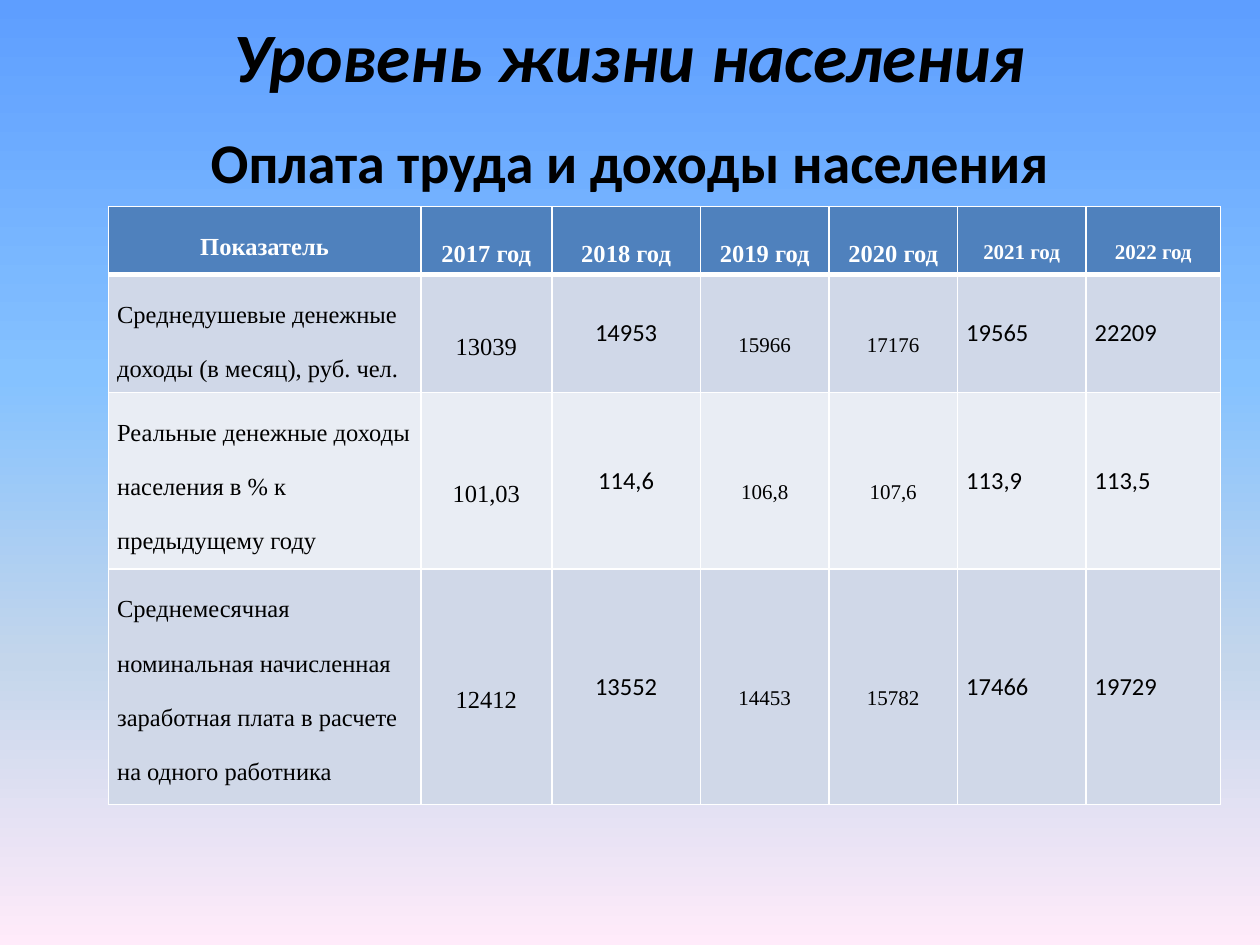
"""Build the slide on pay and income of the population."""
import dataclasses

import lxml.etree
import pptx
import pptx.dml.color
import pptx.enum.text
import pptx.oxml.ns
import pptx.util

Inches = pptx.util.Inches
Pt = pptx.util.Pt
qn = pptx.oxml.ns.qn
ALIGN = pptx.enum.text.PP_ALIGN
ANCHOR = pptx.enum.text.MSO_ANCHOR


@dataclasses.dataclass(frozen=True)
class Theme:
    """Hold the colours, fonts and type sizes."""
    ink: str = "000000"
    white: str = "FFFFFF"
    head: str = "4F81BD"
    bands: tuple = ("D0D8E8", "E9EDF4")
    sky: tuple = ((0, "5E9EFF"), (40, "85C2FF"), (70, "C4D6EB"), (100, "FFEBFA"))
    sans: str = "Calibri"
    serif: str = "Times New Roman"
    title: float = 39.6
    tail: float = 36
    sub: float = 32
    text: float = 14
    small: float = 12


def assign(item, values):
    """Set each named attribute of an item."""
    for name, value in values.items():
        setattr(item, name, value)


class Maker:
    """Draw styled elements on the current slide."""

    def __init__(self, theme, slide):
        """Keep the theme and the slide."""
        self.theme = theme
        self.slide = slide

    def backdrop(self):
        """Fill the background with the sky gradient."""
        fill = self.slide.background.fill
        fill.gradient()
        fill.gradient_angle = 270
        stops = next(self.slide.element.iter(qn("a:gsLst")))
        stops.clear()
        for place, color in self.theme.sky:
            stop = lxml.etree.SubElement(stops, qn("a:gs"), pos=str(place * 1000))
            lxml.etree.SubElement(stop, qn("a:srgbClr"), val=color)

    def phrase(self, par, text, color, font, layout):
        """Put one formatted run in a paragraph."""
        assign(par, layout)
        run = par.add_run()
        run.text = text
        assign(run.font, font)
        run.font.color.rgb = pptx.dml.color.RGBColor.from_string(color)

    def label(self, text, place, font, frame, tail=None):
        """Add a centred text box, with a closing line break if tail is given."""
        box = self.slide.shapes.add_textbox(*map(Inches, place)).text_frame
        assign(box, {"word_wrap": True, **frame})
        par = box.paragraphs[0]
        self.phrase(par, text, self.theme.ink, font, {"alignment": ALIGN.CENTER})
        if tail:
            par.add_line_break()
            lxml.etree.SubElement(par._p, qn("a:endParaRPr"), sz=str(tail * 100))

    def border(self, cell, widths):
        """Draw white lines on the four sides of a cell."""
        props = cell._tc.get_or_add_tcPr()
        for side, width in zip("LRTB", widths):
            line = lxml.etree.SubElement(props, qn(f"a:ln{side}"), w=str(Pt(width)))
            fill = lxml.etree.SubElement(line, qn("a:solidFill"))
            lxml.etree.SubElement(fill, qn("a:srgbClr"), val=self.theme.white)

    def cell(self, cell, text, fill, color, font, layout, anchor, widths):
        """Fill and format one table cell."""
        self.border(cell, widths)
        cell.fill.solid()
        cell.fill.fore_color.rgb = pptx.dml.color.RGBColor.from_string(fill)
        assign(cell, {
            "margin_left": Inches(0.07), "margin_right": Inches(0.07),
            "margin_top": 0, "margin_bottom": 0, "vertical_anchor": anchor,
        })
        self.phrase(cell.text_frame.paragraphs[0], text, color, font, layout)

    def table(self, rows, place, wide, tall):
        """Add the table of values by year."""
        theme = self.theme
        center = {"alignment": ALIGN.CENTER, "line_spacing": 2}
        left = {"alignment": ALIGN.LEFT}
        serif = {"name": theme.serif, "size": Pt(theme.text)}
        small = {"name": theme.serif, "size": Pt(theme.small)}
        sans = {"name": theme.sans, "size": Pt(theme.text)}
        styles = [
            (serif, {**left, "line_spacing": 2}), (serif, center),
            (sans, {"alignment": ALIGN.CENTER}),
            (small, center), (small, center), (sans, left), (sans, left),
        ]
        size = map(Inches, (*place, sum(wide), sum(tall)))
        grid = self.slide.shapes.add_table(len(rows), len(wide), *size).table
        for col, width in zip(grid.columns, wide):
            col.width = Inches(width)
        for row, height in zip(grid.rows, tall):
            row.height = Inches(height)
        for r, row in enumerate(rows):
            for c, text in enumerate(row):
                font, layout = styles[c]
                fill, color = theme.bands[(r - 1) % 2], theme.ink
                if r == 0:
                    font, layout = (small if c > 4 else serif), center
                    fill, color = theme.head, theme.white
                self.cell(
                    grid.cell(r, c), text, fill, color,
                    {**font, "bold": r == 0}, layout,
                    ANCHOR.MIDDLE if c else ANCHOR.TOP,
                    (1, 1, 3 if r == 1 else 1, 3 if r == 0 else 1),
                )


ROWS = [
    ["Показатель", *(f"{year} год" for year in range(2017, 2023))],
    ["Среднедушевые денежные доходы (в месяц), руб. чел.",
     "13039", "14953", "15966", "17176", "19565", "22209"],
    ["Реальные денежные доходы населения в % к предыдущему году",
     "101,03", "114,6", "106,8", "107,6", "113,9", "113,5"],
    ["Среднемесячная номинальная начисленная заработная плата "
     "в расчете на одного работника",
     "12412", "13552", "14453", "15782", "17466", "19729"],
]


def main():
    """Build and save the deck."""
    deck = pptx.Presentation()
    assign(deck, {"slide_width": Inches(10), "slide_height": Inches(7.5)})
    theme = Theme()
    maker = Maker(theme, deck.slides.add_slide(deck.slide_layouts[6]))
    maker.backdrop()
    bold = {"name": theme.sans, "bold": True}
    maker.label(
        "Уровень жизни населения", (0.5, 0.3, 9, 0.87),
        {**bold, "size": Pt(theme.title), "italic": True},
        {"vertical_anchor": ANCHOR.MIDDLE}, theme.tail,
    )
    maker.label(
        "Оплата труда и доходы населения", (0.5, 0.94, 9, 5.76),
        {**bold, "size": Pt(theme.sub)},
        {"vertical_anchor": ANCHOR.TOP, "margin_top": Inches(0.07)},
    )
    maker.table(
        ROWS, (0.86, 1.64),
        (2.48, 1.04, 1.18, 1.02, 1.02, 1.02, 1.07), (0.54, 0.86, 1.29, 1.72),
    )
    deck.save("out.pptx")


if __name__ == "__main__":
    main()
